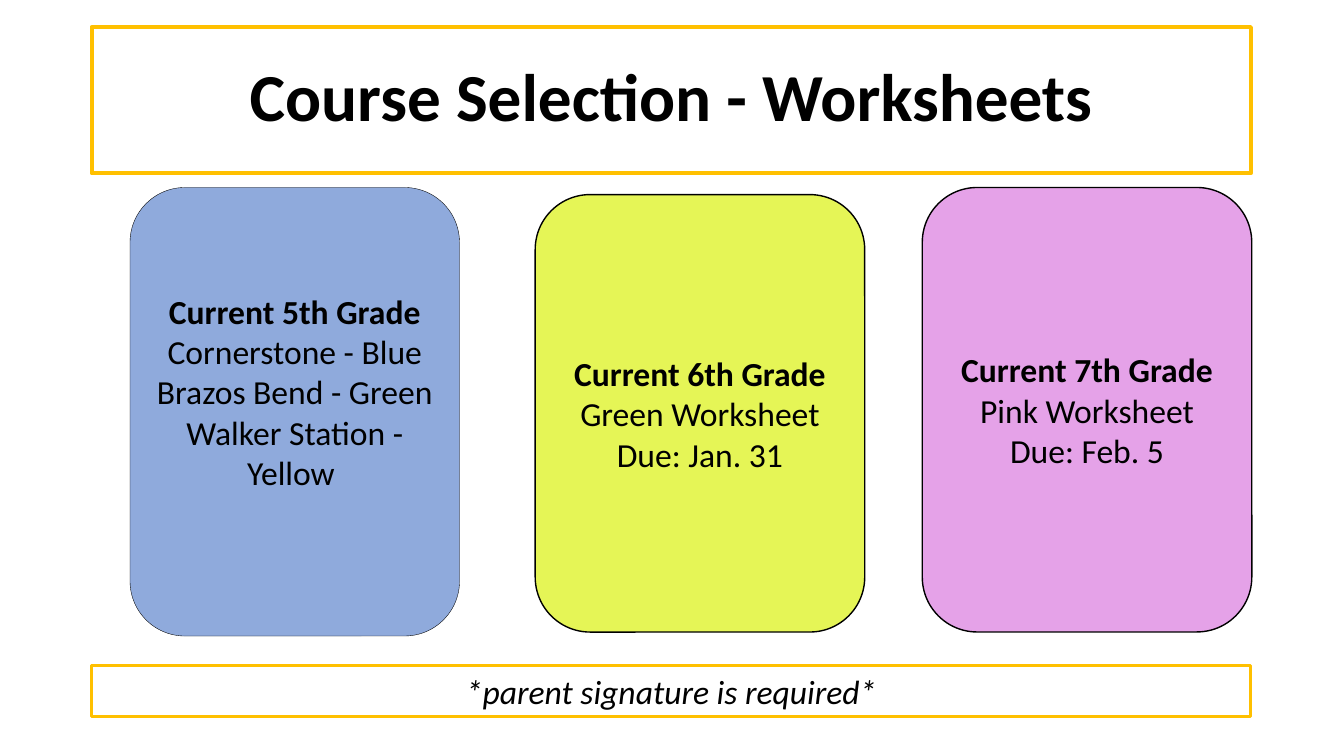
"""Build the course selection worksheets slide."""
from pptx import Presentation
from pptx.dml.color import RGBColor
from pptx.enum import shapes, text
from pptx.util import Pt

BLACK = RGBColor(0, 0, 0)
GOLD = RGBColor(0xFF, 0xC0, 0x00)
BLUE = RGBColor(0x8F, 0xAA, 0xDC)
LIME = RGBColor(0xE5, 0xF5, 0x56)
PINK = RGBColor(0xE5, 0xA2, 0xE8)

TITLE = "Course Selection - Worksheets"
NOTE = "*parent signature is required*"
CARDS = [
    dict(left=92.9, top=133.9, high=320.4, fill=BLUE, edge=0.25, base=32.4,
         lines=["Current 5th Grade", "Cornerstone - Blue",
                "Brazos Bend - Green", "Walker Station - Yellow "]),
    dict(left=382.3, top=139, high=312.5, fill=LIME, edge=1, base=3.6,
         lines=["Current 6th Grade", "Green Worksheet", "Due: Jan. 31"]),
    dict(left=658.8, top=133.9, high=317.5, fill=PINK, edge=1, base=3.6,
         lines=["Current 7th Grade", "Pink Worksheet", "Due: Feb. 5"]),
]
LEFT, WIDE, CARD = 65.5, 828, 235.4


def write(shape, lines, size=24, heads=0, italic=False, space=1, base=3.6):
    """Fill a shape with centred lines, the first few of them bold."""
    frame = shape.text_frame
    frame.word_wrap = True
    frame.vertical_anchor = text.MSO_ANCHOR.MIDDLE
    frame.margin_bottom = Pt(base)
    for i, line in enumerate(lines):
        para = frame.add_paragraph() if i else frame.paragraphs[0]
        para.alignment = text.PP_ALIGN.CENTER
        para.line_spacing = space
        run = para.add_run()
        run.text = line
        font = run.font
        font.name, font.size = "Calibri", Pt(size)
        font.bold, font.italic = i < heads, italic
        font.color.rgb = BLACK


def border(shape, color, width):
    """Outline a shape."""
    shape.line.color.rgb = color
    shape.line.width = Pt(width)


def block(slide, kind, *box):
    """Add a preset shape without a shadow."""
    shape = slide.shapes.add_shape(kind, *map(Pt, box))
    shape.shadow.inherit = False
    return shape


def main():
    """Lay out the slide and save it."""
    deck = Presentation()
    deck.slide_width, deck.slide_height = Pt(960), Pt(540)
    slide = deck.slides.add_slide(deck.slide_layouts[5])

    title = slide.shapes.title
    title.left, title.top = Pt(LEFT), Pt(19.4)
    title.width, title.height = Pt(WIDE), Pt(104.4)
    border(title, GOLD, 3)
    write(title, [TITLE], size=48, heads=1, space=0.9)

    for card in CARDS:
        shape = block(slide, shapes.MSO_SHAPE.ROUNDED_RECTANGLE,
                      card["left"], card["top"], CARD, card["high"])
        shape.fill.solid()
        shape.fill.fore_color.rgb = card["fill"]
        border(shape, BLACK, card["edge"])
        write(shape, card["lines"], heads=1, base=card["base"])

    note = block(slide, shapes.MSO_SHAPE.RECTANGLE, LEFT, 475.2, WIDE, 36.3)
    note.fill.background()
    border(note, GOLD, 2.25)
    write(note, [NOTE], italic=True)

    deck.save("out.pptx")


if __name__ == "__main__":
    main()
